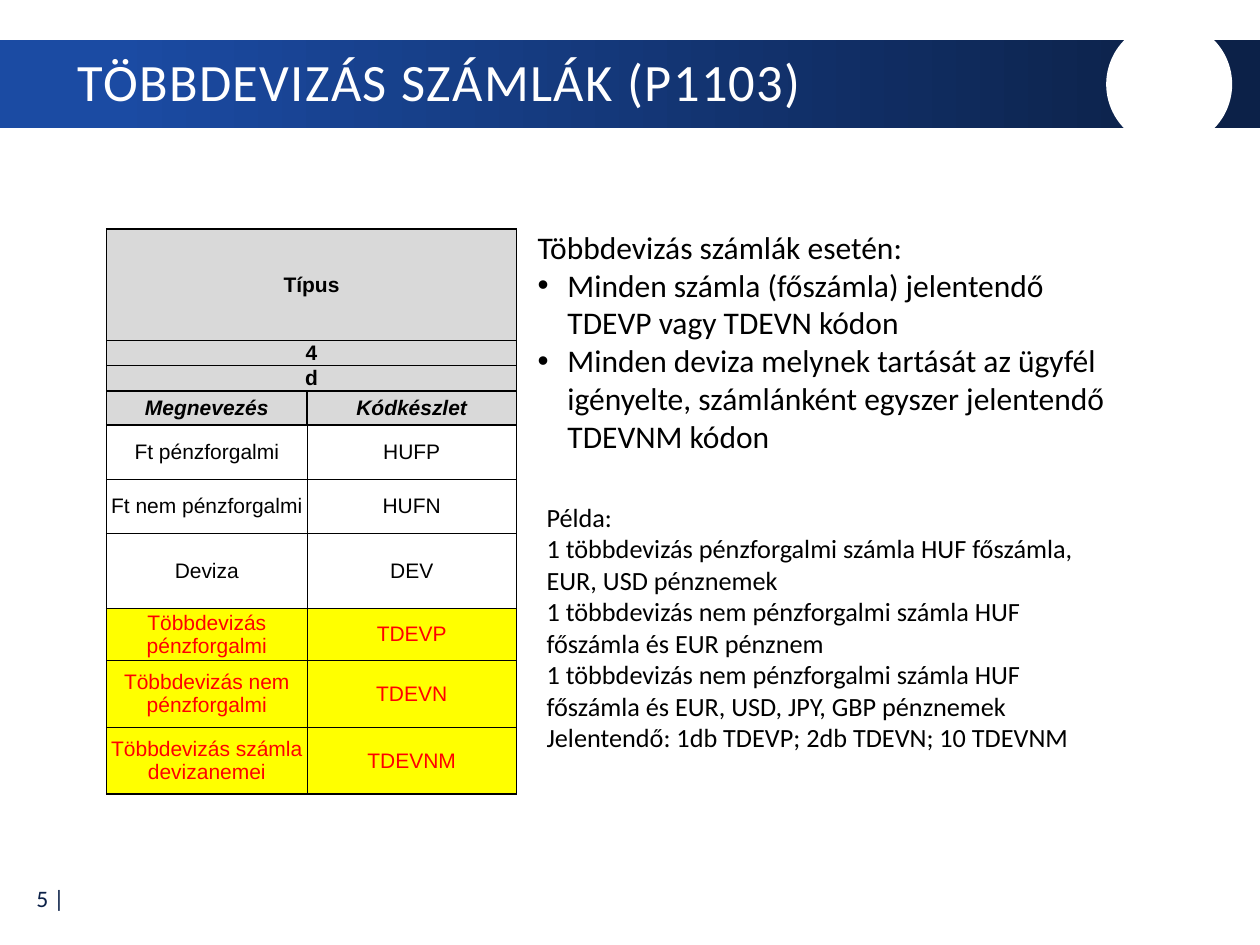
"""Build the slide on multi-currency accounts."""
from typing import NamedTuple, Optional

from lxml import etree
from pptx import Presentation
from pptx.dml.color import RGBColor
from pptx.enum.shapes import MSO_SHAPE
from pptx.enum.text import MSO_ANCHOR, PP_ALIGN
from pptx.oxml.ns import qn
from pptx.util import Cm, Pt

RECT, OVAL = MSO_SHAPE.RECTANGLE, MSO_SHAPE.OVAL
TOP, MIDDLE = MSO_ANCHOR.TOP, MSO_ANCHOR.MIDDLE
LEFT, CENTER, RIGHT = PP_ALIGN.LEFT, PP_ALIGN.CENTER, PP_ALIGN.RIGHT
BLACK, WHITE, NAVY, BLUE = "000000", "FFFFFF", "0C2148", "1B4BA3"
GREY, YELLOW, RED = "D9D9D9", "FFFF00", "FF0000"
HEAD_ROWS = 4


class Box(NamedTuple):
    """Place and size in centimetres."""
    left: float
    top: float
    width: float
    height: float


class Note(NamedTuple):
    """A text box with its style."""
    box: Box
    lines: list[str]
    size: float
    color: str = BLACK
    align: PP_ALIGN = LEFT
    anchor: MSO_ANCHOR = TOP
    dots: bool = False
    track: int = 0
    lead: float = 1.0


class Row(NamedTuple):
    """A table row; a lone label spans both columns."""
    height: float
    label: str
    code: str = ""
    fill: Optional[str] = None
    color: str = BLACK
    bold: bool = False
    slant: bool = False


NOTES = [
    Note(Box(0.03, 17.63, 1.52, 0.94), ["5 |"], 13.5, NAVY, RIGHT, MIDDLE),
    Note(Box(1.32, 0.86, 21.13, 1.7), ["TÖBBDEVIZÁS SZÁMLÁK (P1103)"], 30, WHITE,
         anchor=MIDDLE, track=80, lead=0.9),
    Note(Box(10.59, 4.47, 12.17, 4.88), [
        "Többdevizás számlák esetén:",
        "Minden számla (főszámla) jelentendő TDEVP vagy TDEVN kódon",
        "Minden deviza melynek tartását az ügyfél igényelte, "
        "számlánként egyszer jelentendő TDEVNM kódon",
    ], 18, dots=True),
    Note(Box(10.77, 9.98, 11.99, 5.38), [
        "Példa:",
        "1 többdevizás pénzforgalmi számla HUF főszámla, EUR, USD pénznemek",
        "1 többdevizás nem pénzforgalmi számla HUF főszámla és EUR pénznem",
        "1 többdevizás nem pénzforgalmi számla HUF főszámla és EUR, USD, JPY, GBP pénznemek",
        "Jelentendő: 1db TDEVP; 2db TDEVN; 10 TDEVNM",
    ], 15),
]
WIDTHS = [4.04, 4.22]
ROWS = [
    Row(2.24, "Típus", fill=GREY, bold=True),
    Row(0.51, "4", fill=GREY, bold=True),
    Row(0.51, "d", fill=GREY, bold=True),
    Row(0.69, "Megnevezés", "Kódkészlet", GREY, bold=True, slant=True),
    Row(1.09, "Ft pénzforgalmi", "HUFP"),
    Row(1.09, "Ft nem pénzforgalmi", "HUFN"),
    Row(1.52, "Deviza", "DEV"),
    Row(1.04, "Többdevizás pénzforgalmi", "TDEVP", YELLOW, RED),
    Row(1.35, "Többdevizás nem pénzforgalmi", "TDEVN", YELLOW, RED),
    Row(1.35, "Többdevizás számla devizanemei", "TDEVNM", YELLOW, RED),
]


def paint(target, color: str) -> None:
    """Give a fill, or a font, a solid colour."""
    if hasattr(target, "solid"):
        target.solid()
        target.fore_color.rgb = RGBColor.from_string(color)
    else:
        target.color.rgb = RGBColor.from_string(color)


def add_form(slide, kind: MSO_SHAPE, box: Box):
    """Add a plain shape without line or shadow."""
    form = slide.shapes.add_shape(kind, *map(Cm, box))
    form.shadow.inherit = False
    form.line.fill.background()
    return form


def add_band(slide) -> None:
    """Draw the title band and its white disc."""
    fill = add_form(slide, RECT, Box(0, 0.81, 25.4, 1.78)).fill
    fill.gradient()
    fill.gradient_angle = 0
    for stop, (color, place) in zip(fill.gradient_stops, [(BLUE, 0.09), (NAVY, 0.95)]):
        stop.color.rgb = RGBColor.from_string(color)
        stop.position = place
    paint(add_form(slide, OVAL, Box(22.3, 0.43, 2.54, 2.54)).fill, WHITE)


def add_dot(line) -> None:
    """Turn a paragraph into a bullet with a hanging indent."""
    props = line._p.get_or_add_pPr()
    props.set("marL", str(Cm(0.6)))
    props.set("indent", str(-Cm(0.6)))
    etree.SubElement(props, qn("a:buFont"), typeface="Arial")
    etree.SubElement(props, qn("a:buChar"), char="•")


def add_note(slide, note: Note) -> None:
    """Add a text box."""
    frame = slide.shapes.add_textbox(*map(Cm, note.box)).text_frame
    frame.word_wrap = True
    frame.vertical_anchor = note.anchor
    frame.text = "\n".join(note.lines)
    for rank, line in enumerate(frame.paragraphs):
        line.alignment = note.align
        line.line_spacing = note.lead
        if note.dots and rank:
            add_dot(line)
        for run in line.runs:
            run.font.name, run.font.size = "Calibri", Pt(note.size)
            paint(run.font, note.color)
            if note.track:
                run._r.get_or_add_rPr().set("spc", str(note.track))


def add_edge(cell, side: str, weight: float) -> None:
    """Draw one black border of a cell."""
    edge = etree.SubElement(cell._tc.get_or_add_tcPr(), qn(f"a:ln{side}"), w=str(Pt(weight)))
    fill = etree.SubElement(edge, qn("a:solidFill"))
    etree.SubElement(fill, qn("a:srgbClr"), val=BLACK)


def fill_cell(cell, row: Row, text: str, edges: dict[str, float]) -> None:
    """Write and style one table cell."""
    cell.margin_left = cell.margin_right = cell.margin_top = cell.margin_bottom = 0
    cell.vertical_anchor = MIDDLE
    for side, weight in edges.items():
        add_edge(cell, side, weight)
    if row.fill:
        paint(cell.fill, row.fill)
    else:
        cell.fill.background()
    line = cell.text_frame.paragraphs[0]
    line.text = text
    line.alignment = CENTER
    font = line.font
    for item in [font, *(run.font for run in line.runs)]:
        item.name, item.size = "Arial", Pt(12)
        item.bold, item.italic = row.bold, row.slant
        paint(item, row.color)


def add_grid(slide) -> None:
    """Add the table of account types."""
    size = Box(2.15, 4.62, sum(WIDTHS), sum(row.height for row in ROWS))
    grid = slide.shapes.add_table(len(ROWS), len(WIDTHS), *map(Cm, size)).table
    for column, width in zip(grid.columns, WIDTHS):
        column.width = Cm(width)
    for rank, row in enumerate(ROWS):
        grid.rows[rank].height = Cm(row.height)
        head = rank < HEAD_ROWS
        if not row.code:
            grid.cell(rank, 0).merge(grid.cell(rank, 1))
        for col, text in enumerate((row.label, row.code)):
            thick = {"L": head or col == 0, "R": head or col == 1,
                     "T": rank <= HEAD_ROWS, "B": head or rank == len(ROWS) - 1}
            edges = {side: 1 if heavy else 0.5 for side, heavy in thick.items()}
            fill_cell(grid.cell(rank, col), row, text, edges)


def main() -> None:
    """Build and save the slide."""
    deck = Presentation()
    deck.slide_width, deck.slide_height = Cm(25.4), Cm(19.05)
    slide = deck.slides.add_slide(deck.slide_layouts[6])
    add_band(slide)
    add_grid(slide)
    for note in NOTES:
        add_note(slide, note)
    deck.save("out.pptx")


if __name__ == "__main__":
    main()
